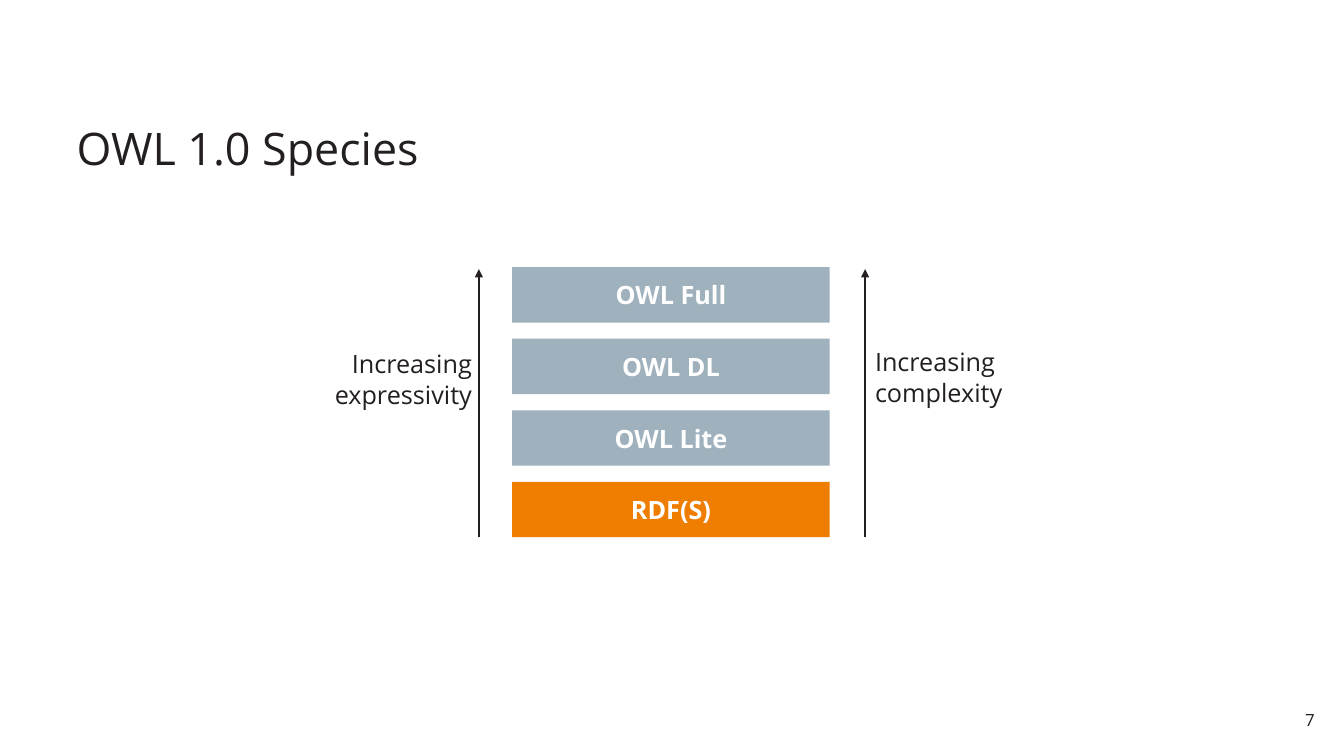
from dataclasses import dataclass

from pptx import Presentation
from pptx.dml.color import RGBColor
from pptx.enum.shapes import MSO_CONNECTOR, MSO_SHAPE
from pptx.enum.text import MSO_ANCHOR, MSO_AUTO_SIZE, PP_ALIGN
from pptx.oxml.ns import qn
from pptx.slide import Slide
from pptx.text.text import TextFrame
from pptx.util import Inches, Pt
from lxml.etree import SubElement

INK = RGBColor(0x23, 0x1F, 0x20)
WHITE = RGBColor(0xFF, 0xFF, 0xFF)
ORANGE = RGBColor(0xEF, 0x7D, 0x00)
GREY_BLUE = RGBColor(0x9F, 0xB1, 0xBD)

LAYER_LEFT, LAYER_TOP = 5.08, 2.65
LAYER_WIDTH, LAYER_HEIGHT = 3.15, 0.55
LAYER_PITCH = 0.71
ARROW_TOP, ARROW_BOTTOM = 2.67, 5.33


@dataclass(frozen=True)
class Layer:
    name: str
    fill: RGBColor


@dataclass(frozen=True)
class Axis:
    arrow_x: float
    lines: tuple[str, ...]
    left: float
    top: float
    width: float
    height: float
    alignment: PP_ALIGN


LAYERS = (
    Layer("OWL Full", GREY_BLUE),
    Layer("OWL DL", GREY_BLUE),
    Layer("OWL Lite", GREY_BLUE),
    Layer("RDF(S)", ORANGE),
)
AXES = (
    Axis(4.75, ("Increasing", "expressivity"), 3.12, 3.41, 1.66, 0.71, PP_ALIGN.RIGHT),
    Axis(8.58, ("Increasing", "complexity"), 8.58, 3.39, 1.55, 0.71, PP_ALIGN.LEFT),
)


def set_attributes(target: object, values: dict[str, object]) -> None:
    for name, value in values.items():
        setattr(target, name, value)


def write_text(frame: TextFrame, lines: tuple[str, ...], size: float, color: RGBColor,
               alignment: PP_ALIGN, bold: bool = False) -> None:
    frame.text = "\n".join(lines)
    for paragraph in frame.paragraphs:
        paragraph.alignment = alignment
        set_attributes(paragraph.font, {"name": "Open Sans", "size": Pt(size), "bold": bold})
        paragraph.font.color.rgb = color


def add_title(slide: Slide, text: str) -> None:
    title = slide.shapes.title
    set_attributes(title, {"left": Inches(0.68), "top": Inches(0.76),
                           "width": Inches(11.97), "height": Inches(1.02)})
    frame = title.text_frame
    set_attributes(frame, {
        "vertical_anchor": MSO_ANCHOR.BOTTOM, "auto_size": MSO_AUTO_SIZE.NONE, "word_wrap": True,
        "margin_left": Inches(0.08), "margin_right": Inches(0.08),
        "margin_top": Inches(0.04), "margin_bottom": Inches(0.04),
    })
    write_text(frame, (text,), 32, INK, PP_ALIGN.LEFT)
    frame.paragraphs[0].line_spacing = 0.9


def add_slide_number(slide: Slide, number: int) -> None:
    box = slide.shapes.add_textbox(Inches(12.65), Inches(6.98), Inches(0.47), Inches(0.31))
    set_attributes(box.text_frame, {
        "word_wrap": True, "margin_left": Inches(0.08), "margin_right": Inches(0.08),
        "margin_top": Inches(0.06), "margin_bottom": Inches(0.06),
    })
    write_text(box.text_frame, (str(number),), 12, INK, PP_ALIGN.RIGHT)


def add_layer(slide: Slide, layer: Layer, row: int) -> None:
    box = slide.shapes.add_shape(
        MSO_SHAPE.RECTANGLE, Inches(LAYER_LEFT), Inches(LAYER_TOP + row * LAYER_PITCH),
        Inches(LAYER_WIDTH), Inches(LAYER_HEIGHT))
    box.shadow.inherit = False
    box.fill.solid()
    box.fill.fore_color.rgb = layer.fill
    box.line.fill.background()
    set_attributes(box.text_frame, {"vertical_anchor": MSO_ANCHOR.MIDDLE, "word_wrap": False})
    write_text(box.text_frame, (layer.name,), 18, WHITE, PP_ALIGN.CENTER, bold=True)


def add_axis(slide: Slide, axis: Axis) -> None:
    """Draw an upward arrow and its label."""
    arrow = slide.shapes.add_connector(
        MSO_CONNECTOR.STRAIGHT, Inches(axis.arrow_x), Inches(ARROW_BOTTOM),
        Inches(axis.arrow_x), Inches(ARROW_TOP))
    arrow.line.width = Pt(1.5)
    arrow.line.color.rgb = INK
    properties = arrow.element.spPr
    SubElement(properties.find(qn("a:ln")), qn("a:tailEnd"), type="triangle")
    SubElement(properties, qn("a:effectLst"))

    label = slide.shapes.add_textbox(Inches(axis.left), Inches(axis.top),
                                     Inches(axis.width), Inches(axis.height))
    set_attributes(label.text_frame, {"word_wrap": False,
                                      "auto_size": MSO_AUTO_SIZE.SHAPE_TO_FIT_TEXT})
    write_text(label.text_frame, axis.lines, 18, INK, axis.alignment)


def main() -> None:
    presentation = Presentation()
    set_attributes(presentation, {"slide_width": Inches(13.33), "slide_height": Inches(7.5)})
    slide = presentation.slides.add_slide(presentation.slide_layouts.get_by_name("Title Only"))
    add_title(slide, "OWL 1.0 Species")
    for row, layer in enumerate(LAYERS):
        add_layer(slide, layer, row)
    for axis in AXES:
        add_axis(slide, axis)
    add_slide_number(slide, 7)
    presentation.save("out.pptx")


if __name__ == "__main__":
    main()
